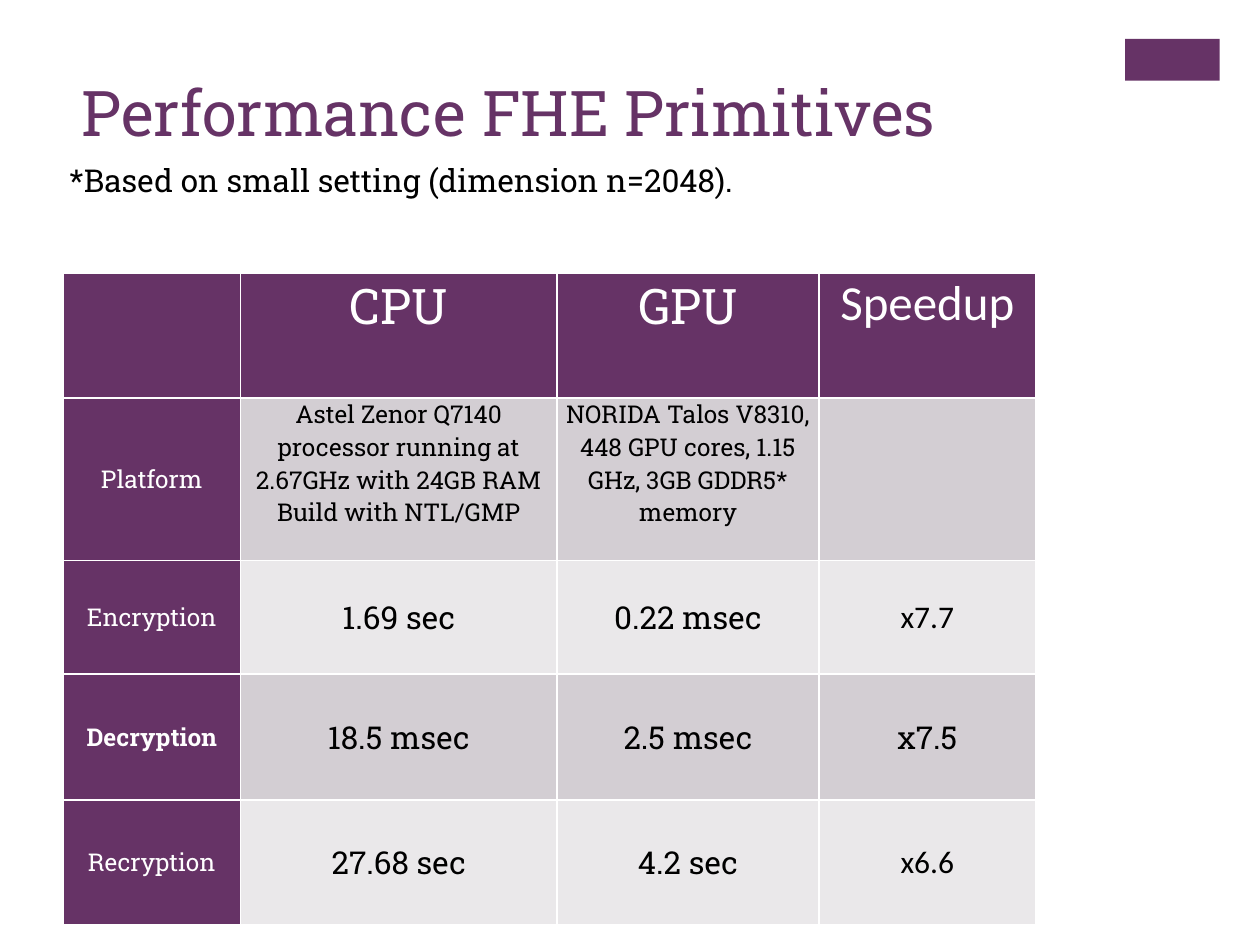
import pptx
import pptx.dml.color
import pptx.enum.shapes
import pptx.enum.text
import pptx.oxml
import pptx.oxml.ns
import pptx.util

Inches = pptx.util.Inches
Pt = pptx.util.Pt
ANCHOR = pptx.enum.text.MSO_ANCHOR
ALIGN = pptx.enum.text.PP_ALIGN

PURPLE, WHITE, BLACK = "663366", "FFFFFF", "000000"
BANDS = ["D3CED3", "EAE8EA"]
SLAB, SANS = "Roboto Slab", "Calibri"

COLUMN_WIDTHS = [1.41, 2.51, 2.08, 1.72]
ROW_HEIGHTS = [0.99, 1.29, 0.9, 1, 0.99]
ROWS = [
    ["", "CPU", "GPU", "Speedup"],
    [
        "Platform",
        "Astel Zenor Q7140 processor running at 2.67GHz with 24GB RAM\nBuild with NTL/GMP",
        "NORIDA Talos V8310, 448 GPU cores, 1.15 GHz, 3GB GDDR5* memory",
        "",
    ],
    ["Encryption", "1.69 sec", "0.22 msec", "x7.7"],
    ["Decryption", "18.5 msec", "2.5 msec", "x7.5"],
    ["Recryption", "27.68 sec", "4.2 sec", "x6.6"],
]
SANS_CELLS = {"Speedup", "x7.7", "x6.6"}
BOLD_CELLS = {"Decryption"}


def color(value):
    return pptx.dml.color.RGBColor.from_string(value)


def place(shape, box):
    shape.left, shape.top, shape.width, shape.height = map(Inches, box)


def add_run(para, text, size, ink, font=SLAB, bold=False):
    span = para.add_run()
    span.text = text
    span.font.size = Pt(size)
    span.font.name = font
    span.font.bold = bold
    span.font.color.rgb = color(ink)


def add_accent(page, box):
    accent = page.shapes.add_shape(
        pptx.enum.shapes.MSO_SHAPE.RECTANGLE, *map(Inches, box)
    )
    accent.shadow.inherit = False
    accent.fill.solid()
    accent.fill.fore_color.rgb = color(PURPLE)
    accent.line.fill.background()


def set_title(page, box):
    title = page.shapes.title
    place(title, box)
    title.text_frame.vertical_anchor = ANCHOR.TOP
    para = title.text_frame.paragraphs[0]
    para.alignment = ALIGN.LEFT
    add_run(para, "Performance FHE Primitives", 36, PURPLE)


def add_note(page, box):
    frame = page.shapes.add_textbox(*map(Inches, box)).text_frame
    frame.word_wrap = True
    add_run(
        frame.paragraphs[0], "*Based on small setting (dimension n=2048).", 18, BLACK
    )


def add_borders(cell):
    properties = cell._tc.get_or_add_tcPr()
    for index, side in enumerate(["lnL", "lnR", "lnT", "lnB"]):
        border = pptx.oxml.parse_xml(
            f'<a:{side} {pptx.oxml.ns.nsdecls("a")} w="{Pt(1)}"><a:solidFill>'
            f'<a:srgbClr val="{WHITE}"/></a:solidFill></a:{side}>'
        )
        properties.insert(index, border)


def fill_cell(cell, text, row, column):
    heading = row == 0 or column == 0
    cell.fill.solid()
    cell.fill.fore_color.rgb = color(PURPLE if heading else BANDS[(row - 1) % 2])
    add_borders(cell)
    cell.margin_left = cell.margin_right = Inches(0.07)
    cell.margin_top = cell.margin_bottom = 0
    top = row == 0 or (row == 1 and column > 0)
    cell.vertical_anchor = ANCHOR.TOP if top else ANCHOR.MIDDLE
    if not text:
        return
    size = 28 if row == 0 else 14 if row == 1 or column == 0 else 18
    font = SANS if text in SANS_CELLS else SLAB
    frame = cell.text_frame
    for index, line in enumerate(text.split("\n")):
        para = frame.add_paragraph() if index else frame.paragraphs[0]
        para.alignment = ALIGN.CENTER
        ink = WHITE if heading else BLACK
        add_run(para, line, size, ink, font, text in BOLD_CELLS)


def add_timings(page, left, top):
    box = [left, top, sum(COLUMN_WIDTHS), sum(ROW_HEIGHTS)]
    table = page.shapes.add_table(
        len(ROWS), len(COLUMN_WIDTHS), *map(Inches, box)
    ).table
    table.first_col = True
    for column, width in zip(table.columns, COLUMN_WIDTHS):
        column.width = Inches(width)
    for row, height in zip(table.rows, ROW_HEIGHTS):
        row.height = Inches(height)
    for row, texts in enumerate(ROWS):
        for column, text in enumerate(texts):
            fill_cell(table.cell(row, column), text, row, column)


def main():
    deck = pptx.Presentation()
    deck.slide_width, deck.slide_height = Inches(10), Inches(7.5)
    page = deck.slides.add_slide(deck.slide_layouts[5])
    add_accent(page, [8.93, 0.31, 0.75, 0.33])
    set_title(page, [0.55, 0.53, 8.26, 1.22])
    add_timings(page, 0.5, 2.17)
    add_note(page, [0.45, 1.23, 8.25, 0.4])
    deck.save("out.pptx")


if __name__ == "__main__":
    main()
